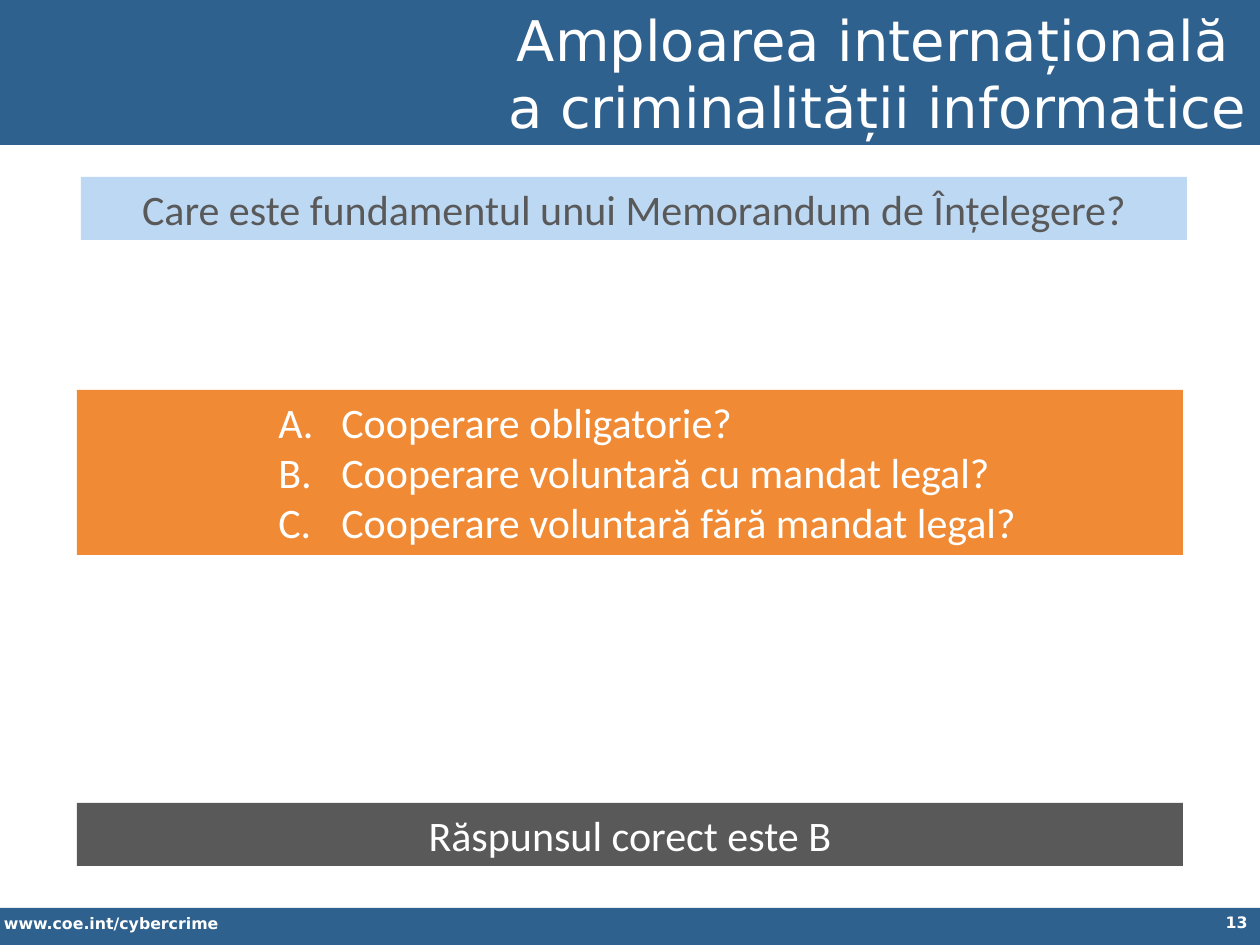
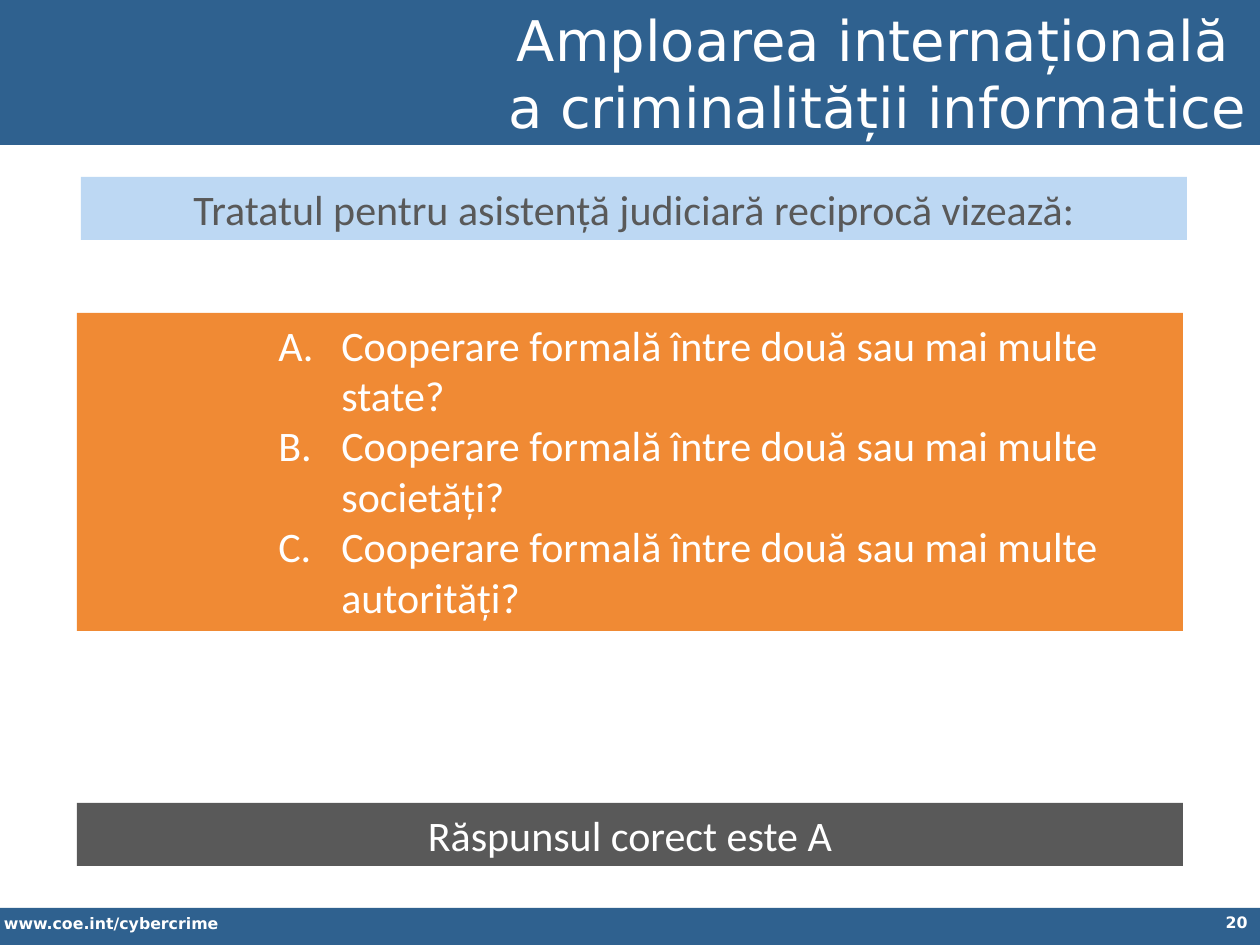
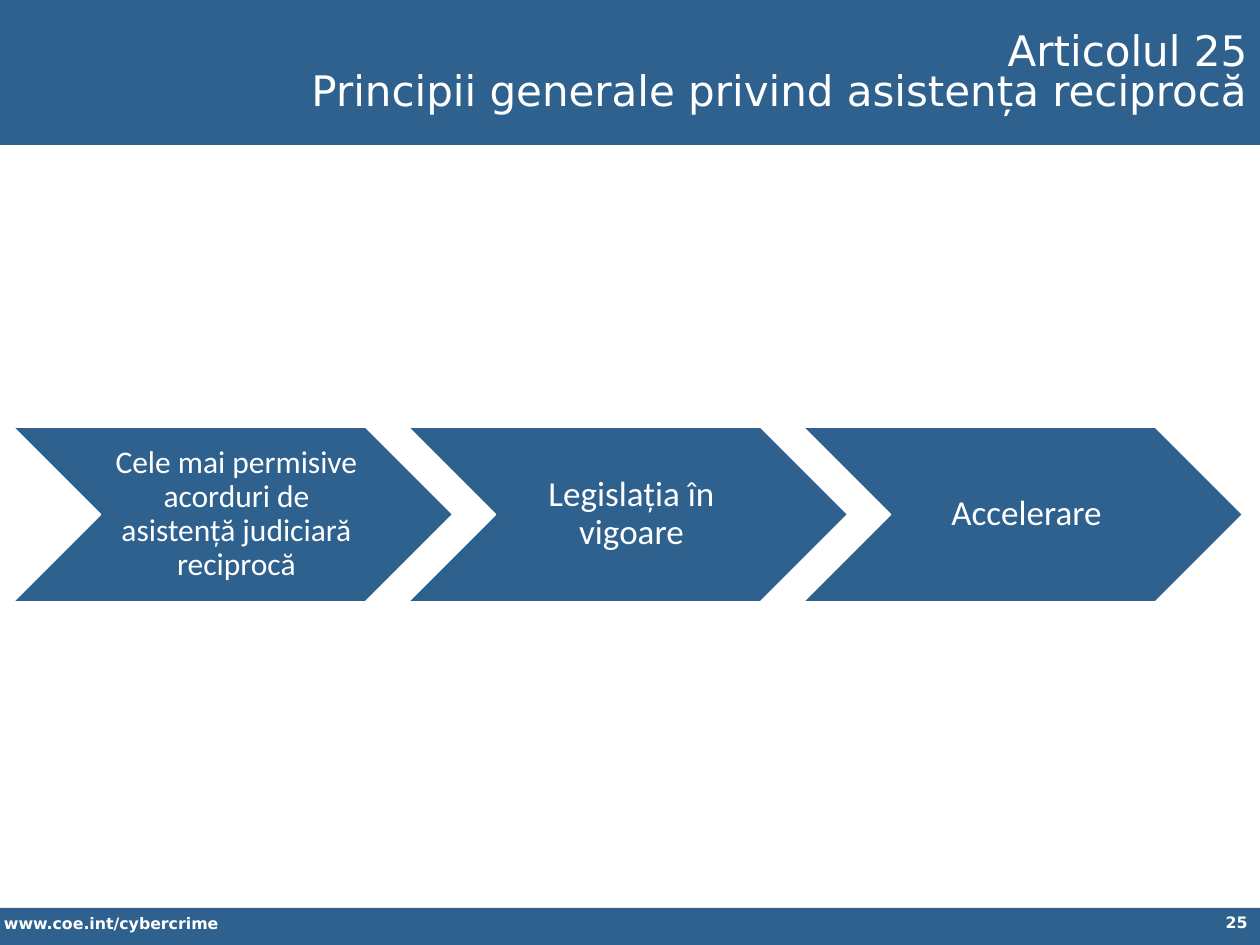
from dataclasses import dataclass

from lxml.etree import SubElement
from pptx import Presentation
from pptx.dml.color import RGBColor
from pptx.enum.shapes import MSO_SHAPE as SHAPE
from pptx.enum.text import MSO_ANCHOR as ANCHOR, MSO_AUTO_SIZE as AUTO, PP_ALIGN as ALIGN
from pptx.oxml.ns import qn
from pptx.util import Emu, Pt


@dataclass(frozen=True)
class Theme:
    blue: str = "2F618F"
    pale: str = "BDD8F3"
    orange: str = "F08A34"
    gray: str = "595959"
    white: str = "FFFFFF"
    head_font: str = "DejaVu Sans"
    body_font: str = "Calibri"
    title: int = 32
    subtitle: int = 24
    body: int = 24
    step: int = 20
    step_small: int = 18
    footer: int = 9


T = Theme()
WIDTH, HEIGHT = 1260, 945
HEADER_H, FOOTER_Y = 145, 908
OPTIONS_MIDDLE, LINE_H, OPTIONS_PAD = 472, 51, 12
QUIZ_TITLE = ["Amploarea internațională ", "a criminalității informatice"]


def px(n):
    return Emu(round(n * 914400 / 126))


def place(sp, box):
    sp.left, sp.top, sp.width, sp.height = map(px, box)


def write(sp, lines, size, color=T.white, font=T.body_font, bold=False,
          align=ALIGN.LEFT, anchor=ANCHOR.TOP, spacing=None):
    """Fill a shape with one run per paragraph and return the paragraphs."""
    tf = sp.text_frame
    tf.word_wrap = True
    tf.auto_size = AUTO.NONE
    tf.vertical_anchor = anchor
    for i, line in enumerate(lines):
        p = tf.add_paragraph() if i else tf.paragraphs[0]
        p.alignment = align
        if spacing:
            p.line_spacing = spacing
        r = p.add_run()
        r.text = line
        r.font.name, r.font.size, r.font.bold = font, Pt(size), bold
        r.font.color.rgb = RGBColor.from_string(color)
    return tf.paragraphs


def add_block(slide, box, fill, kind=SHAPE.RECTANGLE, line=None):
    sp = slide.shapes.add_shape(kind, *map(px, box))
    sp.shadow.inherit = False
    sp.fill.solid()
    sp.fill.fore_color.rgb = RGBColor.from_string(fill)
    if line:
        sp.line.color.rgb = RGBColor.from_string(line)
        sp.line.width = Pt(1)
    else:
        sp.line.fill.background()
    return sp


def add_footer_text(slide, box, text, align):
    sp = slide.shapes.add_textbox(*map(px, box))
    write(sp, [text], T.footer, font=T.head_font, bold=True, align=align)
    return sp


def move_bands_to_layout(slide):
    """Draw the shared bands and web address, then hand them to the layout."""
    header = add_block(slide, (0, 0, WIDTH, HEADER_H), T.blue)
    footer = add_block(slide, (0, FOOTER_Y, WIDTH, HEIGHT - FOOTER_Y), T.blue)
    address = add_footer_text(slide, (0, FOOTER_Y, 444, 32), "www.coe.int/cybercrime", ALIGN.LEFT)
    address.text_frame.margin_left = px(4)
    tree = slide.slide_layout.shapes._spTree
    for sp in (header, footer, address):
        tree.append(sp._element)


def add_slide(prs, number, title, size, box, spacing=None):
    slide = prs.slides.add_slide(prs.slide_layouts[5])
    if len(prs.slides) == 1:
        move_bands_to_layout(slide)
    place(slide.shapes.title, box)
    write(slide.shapes.title, title, size, font=T.head_font, align=ALIGN.RIGHT,
          anchor=ANCHOR.MIDDLE, spacing=spacing)
    add_footer_text(slide, (966, 907, 294, 38), str(number), ALIGN.RIGHT)
    return slide


def add_options(slide, x, width, options, line_count):
    """Lettered options in a block centred on the slide's options line."""
    h = line_count * LINE_H + OPTIONS_PAD
    sp = add_block(slide, (x, OPTIONS_MIDDLE - h // 2, width, h), T.orange)
    for p in write(sp, options, T.body):
        pPr = p._p.get_or_add_pPr()
        pPr.set("marL", str(px(252)))
        pPr.set("indent", str(-px(63)))
        SubElement(pPr, qn("a:buFont"), typeface="+mj-lt")
        SubElement(pPr, qn("a:buAutoNum"), type="alphaUcPeriod")


def add_quiz_slide(prs, number, question, options, line_count, answer):
    slide = add_slide(prs, number, QUIZ_TITLE, T.title, (277, 9, 983, 127))
    x, width, h = 77, 1106, 63
    sp = add_block(slide, (x + 4, 177, width, h), T.pale)
    write(sp, [question], T.body, T.gray, align=ALIGN.CENTER)
    add_options(slide, x, width, options, line_count)
    sp = add_block(slide, (x, 803, width, h), T.gray)
    write(sp, [f"Răspunsul corect este {answer}"], T.body, align=ALIGN.CENTER)


def add_chevrons(slide, box, steps, pitch):
    x, y, w, h = box
    for i, (text, size) in enumerate(steps):
        sp = add_block(slide, (x + i * pitch, y, w, h), T.blue, SHAPE.CHEVRON, T.white)
        write(sp, [text], size, align=ALIGN.CENTER, anchor=ANCHOR.MIDDLE, spacing=0.9)
        tf = sp.text_frame
        tf.margin_left = px(11)
        tf.margin_top = tf.margin_right = tf.margin_bottom = px(4)


def add_principles_slide(prs):
    title = ["Articolul 25", "Principii generale privind asistența reciprocă"]
    slide = add_slide(prs, 25, title, T.subtitle, (213, 11, 1047, 127), spacing=0.8)
    steps = [
        ("Cele mai permisive acorduri de asistență judiciară reciprocă", T.step_small),
        ("Legislația în vigoare", T.step),
        ("Accelerare", T.step),
    ]
    add_chevrons(slide, (13, 427, 440, 175), steps, pitch=395)


def main():
    prs = Presentation()
    prs.slide_width, prs.slide_height = px(WIDTH), px(HEIGHT)
    add_quiz_slide(
        prs, 13, "Care este fundamentul unui Memorandum de Înțelegere?",
        ["Cooperare obligatorie?",
         "Cooperare voluntară cu mandat legal?",
         "Cooperare voluntară fără mandat legal?"], 3, "B")
    parties = ["state", "societăți", "autorități"]
    add_quiz_slide(
        prs, 20, "Tratatul pentru asistență judiciară reciprocă vizează:",
        [f"Cooperare formală între două sau mai multe {party}?" for party in parties], 6, "A")
    add_principles_slide(prs)
    prs.save("out.pptx")


if __name__ == "__main__":
    main()
